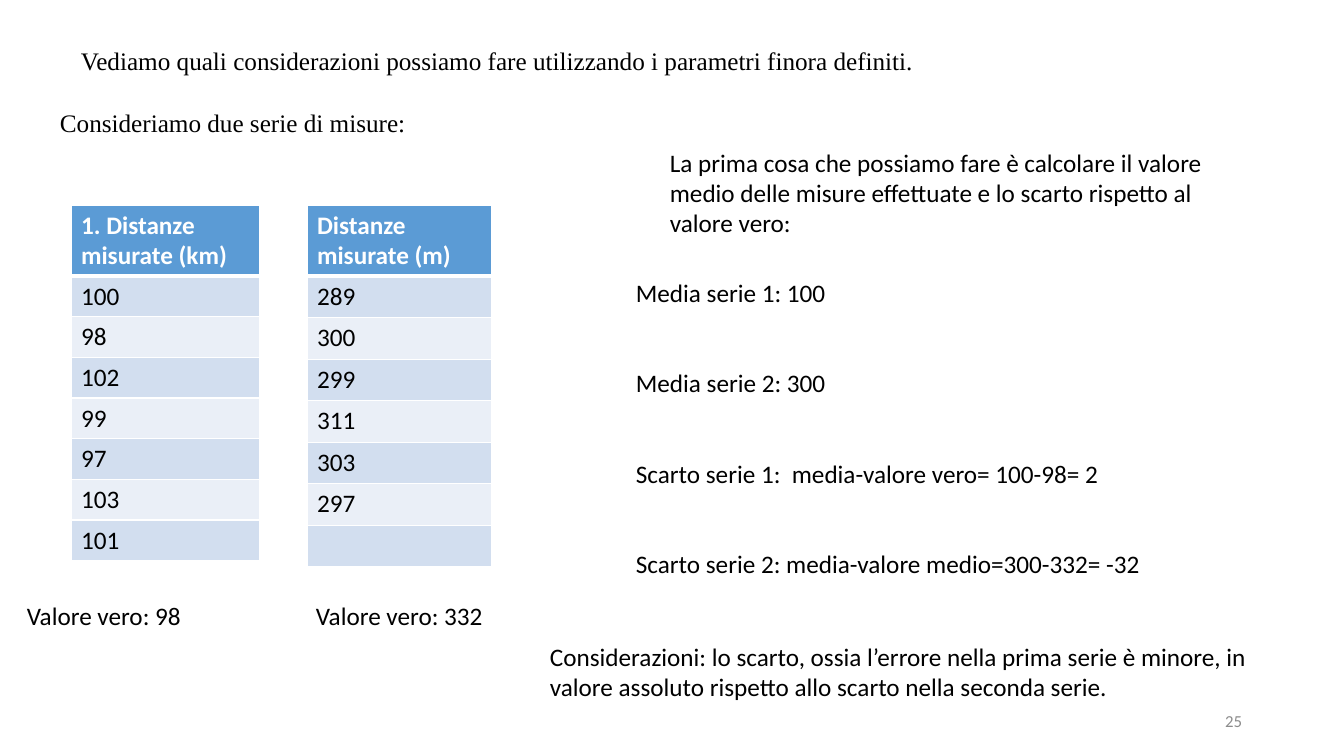
from dataclasses import dataclass

from lxml.etree import SubElement
from pptx import Presentation
from pptx.dml.color import RGBColor
from pptx.enum.text import MSO_ANCHOR as Anchor, PP_ALIGN as Align
from pptx.oxml.ns import qn
from pptx.util import Emu, Pt

EMU_PER_PX = 914400 / 100.8


@dataclass(frozen=True)
class Theme:
    body_font: str = "Calibri"
    intro_font: str = "Times New Roman"
    body_size: int = 18
    number_size: int = 12
    text: str = "000000"
    white: str = "FFFFFF"
    muted: str = "8C8C8C"
    header: str = "5B9BD5"
    bands: tuple = ("D2DEEF", "EAEFF7")
    thin: int = 1
    thick: int = 3


THEME = Theme()
HEADER_HEIGHT = 71

SERIES = [
    # left, top, width, height, heading, values
    (71, 205, 189, 356, "1. Distanze misurate (km)",
     ["100", "98", "102", "99", "97", "103", "101"]),
    (307, 205, 185, 362, "Distanze misurate (m)",
     ["289", "300", "299", "311", "303", "297", ""]),
]

RESULTS = [
    "Media serie 1: 100",
    "Media serie 2: 300",
    "Scarto serie 1:  media-valore vero= 100-98= 2",
    "Scarto serie 2: media-valore medio=300-332= -32",
]


def px(length):
    return Emu(round(length * EMU_PER_PX))


def write(paragraph, text, *, font=THEME.body_font, size=THEME.body_size,
          color=THEME.text, bold=False, align=Align.LEFT, gap=0):
    paragraph.alignment = align
    paragraph.space_before = Pt(gap)
    paragraph.font.size = Pt(size)
    if text:
        run = paragraph.add_run()
        run.text = text
        run.font.name = font
        run.font.size = Pt(size)
        run.font.bold = bold
        run.font.color.rgb = RGBColor.from_string(color)


def add_text(slide, box, lines, *, anchor=Anchor.TOP, gap=0, **style):
    frame = slide.shapes.add_textbox(*map(px, box)).text_frame
    frame.word_wrap = True
    frame.vertical_anchor = anchor
    for index, line in enumerate(lines):
        paragraph = frame.add_paragraph() if index else frame.paragraphs[0]
        write(paragraph, line, gap=gap if index else 0, **style)


def set_borders(cell, top, bottom):
    properties = cell._tc.get_or_add_tcPr()
    widths = {"lnL": THEME.thin, "lnR": THEME.thin, "lnT": top, "lnB": bottom}
    for side, width in widths.items():
        line = SubElement(properties, qn(f"a:{side}"), w=str(Pt(width)))
        fill = SubElement(line, qn("a:solidFill"))
        SubElement(fill, qn("a:srgbClr"), val=THEME.white)


def add_series_table(slide, left, top, width, height, heading, values):
    frame = slide.shapes.add_table(len(values) + 1, 1,
                                   *map(px, (left, top, width, height)))
    table = frame.table
    for index, text in enumerate([heading, *values]):
        is_header = index == 0
        cell = table.cell(index, 0)
        table.rows[index].height = px(
            HEADER_HEIGHT if is_header else (height - HEADER_HEIGHT) / len(values))
        # Borders come before the fill in the cell properties
        set_borders(cell, THEME.thick if index == 1 else THEME.thin,
                    THEME.thick if is_header else THEME.thin)
        cell.fill.solid()
        cell.fill.fore_color.rgb = RGBColor.from_string(
            THEME.header if is_header else THEME.bands[(index - 1) % 2])
        write(cell.text_frame.paragraphs[0], text, bold=is_header,
              color=THEME.white if is_header else THEME.text)


def main():
    presentation = Presentation()
    presentation.slide_width, presentation.slide_height = px(1344), px(756)
    slide = presentation.slides.add_slide(presentation.slide_layouts[6])

    # Introduction
    add_text(slide, (71, 40, 1214, 40),
             ["Vediamo quali considerazioni possiamo fare utilizzando "
              "i parametri finora definiti."], font=THEME.intro_font)
    add_text(slide, (50, 102, 1265, 40),
             ["Consideriamo due serie di misure:"], font=THEME.intro_font)

    # Measurement series and their true values
    for series in SERIES:
        add_series_table(slide, *series)
    add_text(slide, (17, 595, 270, 40), ["Valore vero: 98"])
    add_text(slide, (306, 595, 270, 40), ["Valore vero: 332"])

    # Means, deviations and conclusion
    add_text(slide, (660, 142, 591, 102),
             ["La prima cosa che possiamo fare è calcolare il valore medio delle "
              "misure effettuate e lo scarto rispetto al valore vero:"])
    add_text(slide, (626, 272, 594, 346), RESULTS, gap=43)
    add_text(slide, (540, 636, 766, 72),
             ["Considerazioni: lo scarto, ossia l’errore nella prima serie è minore, "
              "in valore assoluto rispetto allo scarto nella seconda serie."])

    # Slide number
    add_text(slide, (950, 701, 302, 40), ["25"], anchor=Anchor.MIDDLE,
             size=THEME.number_size, color=THEME.muted, align=Align.RIGHT)

    presentation.save("out.pptx")


if __name__ == "__main__":
    main()
